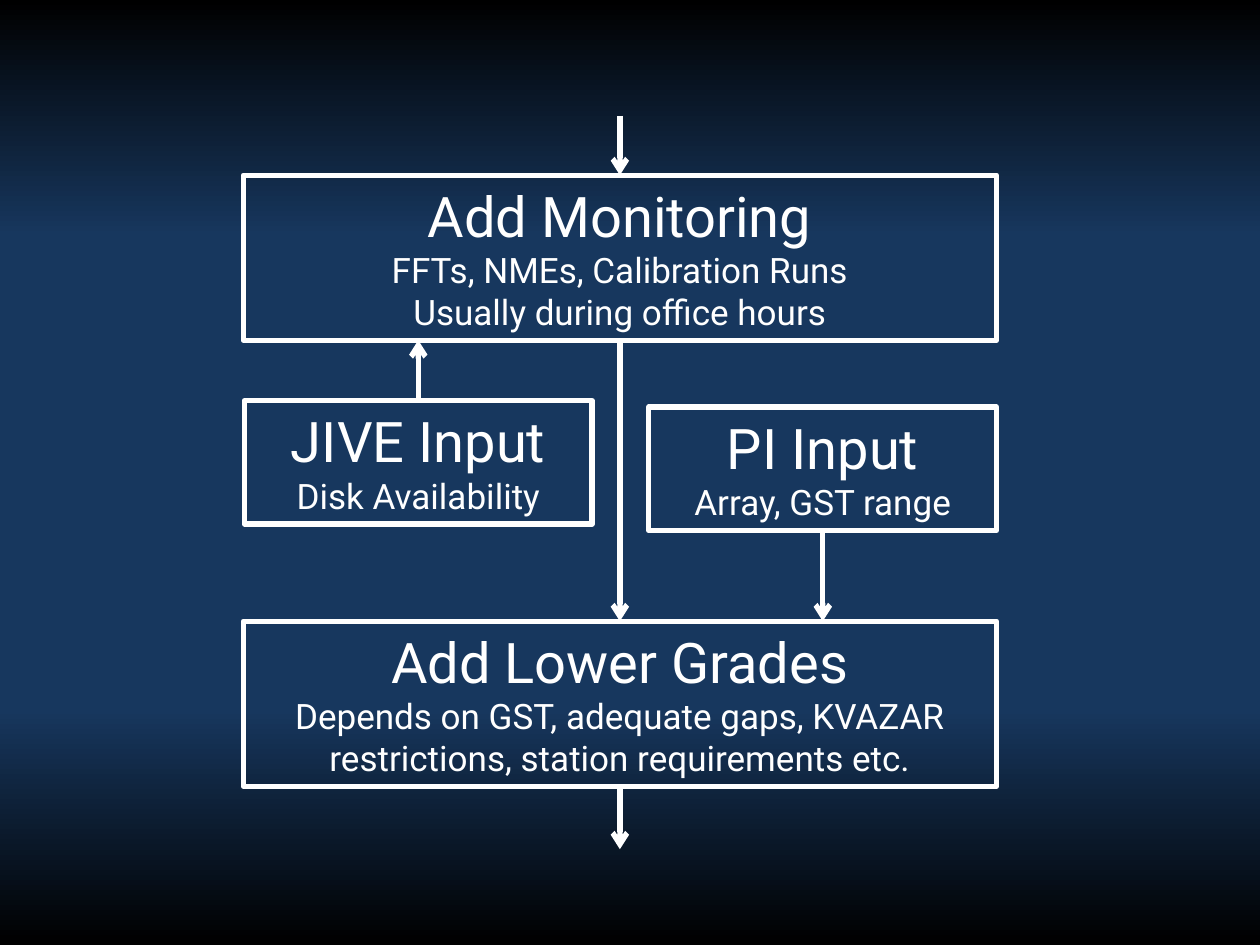
"""Build the scheduling flow slide: monitoring, inputs and lower grades."""
import copy

import pptx
import pptx.dml.color
import pptx.enum.shapes
import pptx.enum.text
import pptx.oxml
import pptx.oxml.ns
import pptx.util

Inches, Pt = pptx.util.Inches, pptx.util.Pt
WHITE = pptx.dml.color.RGBColor(0xFF, 0xFF, 0xFF)
BLACK = pptx.dml.color.RGBColor(0x00, 0x00, 0x00)
NAVY = pptx.dml.color.RGBColor(0x17, 0x37, 0x5E)

BACKGROUND = [(0, BLACK), (0.25, NAVY), (0.75, NAVY), (1, BLACK)]
WIDE, NARROW = (5.98, 1.31), (2.76, 0.98)
BOXES = {
    "monitoring": ((1.93, 1.39), WIDE, "Add Monitoring",
                   ["FFTs, NMEs, Calibration Runs", "Usually during office hours"]),
    "pi": ((5.15, 3.23), NARROW, "PI Input", ["Array, GST range"]),
    "grades": ((1.93, 4.93), WIDE, "Add Lower Grades",
               ["Depends on GST, adequate gaps, KVAZAR restrictions, "
                "station requirements etc."]),
    "jive": ((1.94, 3.18), NARROW, "JIVE Input", ["Disk Availability"]),
}
TOP, BOTTOM = 0, 2
ARROWS = [
    ((4.92, 0.92), ("monitoring", TOP)),
    (("monitoring", BOTTOM), ("grades", TOP)),
    (("grades", BOTTOM), (4.92, 6.74)),
    (("pi", BOTTOM), (6.53, 4.93)),
    (("jive", TOP), (3.32, 2.70)),
]
HEADING = {"name": "Roboto", "size": Pt(32)}
DETAIL = {"name": "Roboto", "size": Pt(20)}
FRAME = {
    "word_wrap": True,
    "vertical_anchor": pptx.enum.text.MSO_ANCHOR.TOP,
    "auto_size": pptx.enum.text.MSO_AUTO_SIZE.SHAPE_TO_FIT_TEXT,
}


def apply(target, values):
    for name, value in values.items():
        setattr(target, name, value)


def set_line(sp):
    sp.line.color.rgb = WHITE
    sp.line.width = Pt(3)


def set_background(s):
    fill = s.background.fill
    fill.gradient()
    fill.gradient_angle = 270
    stops = s.element.find(".//" + pptx.oxml.ns.qn("a:gsLst"))
    while len(stops) < len(BACKGROUND):
        stops.append(copy.deepcopy(stops[0]))
    for stop, (position, color) in zip(fill.gradient_stops, BACKGROUND):
        stop.position = position
        stop.color.rgb = color


def add_box(s, corner, size, heading, details):
    sp = s.shapes.add_shape(pptx.enum.shapes.MSO_SHAPE.RECTANGLE,
                            *map(Inches, corner + size))
    sp.shadow.inherit = False
    sp.fill.background()
    set_line(sp)
    tf = sp.text_frame
    tf.text = "\n".join([heading] + details)
    apply(tf, FRAME)
    for i, p in enumerate(tf.paragraphs):
        p.alignment = pptx.enum.text.PP_ALIGN.CENTER
        r = p.runs[0]
        apply(r.font, DETAIL if i else HEADING)
        r.font.color.rgb = WHITE
    return sp


def end_point(end):
    if end[0] not in BOXES:
        return end
    (left, top), (width, height) = BOXES[end[0]][:2]
    return left + width / 2, top + (height if end[1] == BOTTOM else 0)


def add_arrow(s, boxes, start, end):
    sp = s.shapes.add_connector(pptx.enum.shapes.MSO_CONNECTOR.STRAIGHT,
                                *map(Inches, end_point(start) + end_point(end)))
    for place, connect in ((start, sp.begin_connect), (end, sp.end_connect)):
        if place[0] in boxes:
            connect(boxes[place[0]], place[1])
    set_line(sp)
    line = sp.line.fill and sp.element.spPr.find(pptx.oxml.ns.qn("a:ln"))
    namespace = pptx.oxml.ns.nsdecls("a")
    line.append(pptx.oxml.parse_xml(f'<a:tailEnd {namespace} type="arrow"/>'))
    sp.element.spPr.append(pptx.oxml.parse_xml(f"<a:effectLst {namespace}/>"))


def main():
    prs = pptx.Presentation()
    apply(prs, {"slide_width": Inches(10), "slide_height": Inches(7.5)})
    s = prs.slides.add_slide(prs.slide_layouts[6])
    set_background(s)
    boxes = {name: add_box(s, *box) for name, box in BOXES.items()}
    for start, end in ARROWS:
        add_arrow(s, boxes, start, end)
    prs.save("out.pptx")


if __name__ == "__main__":
    main()
